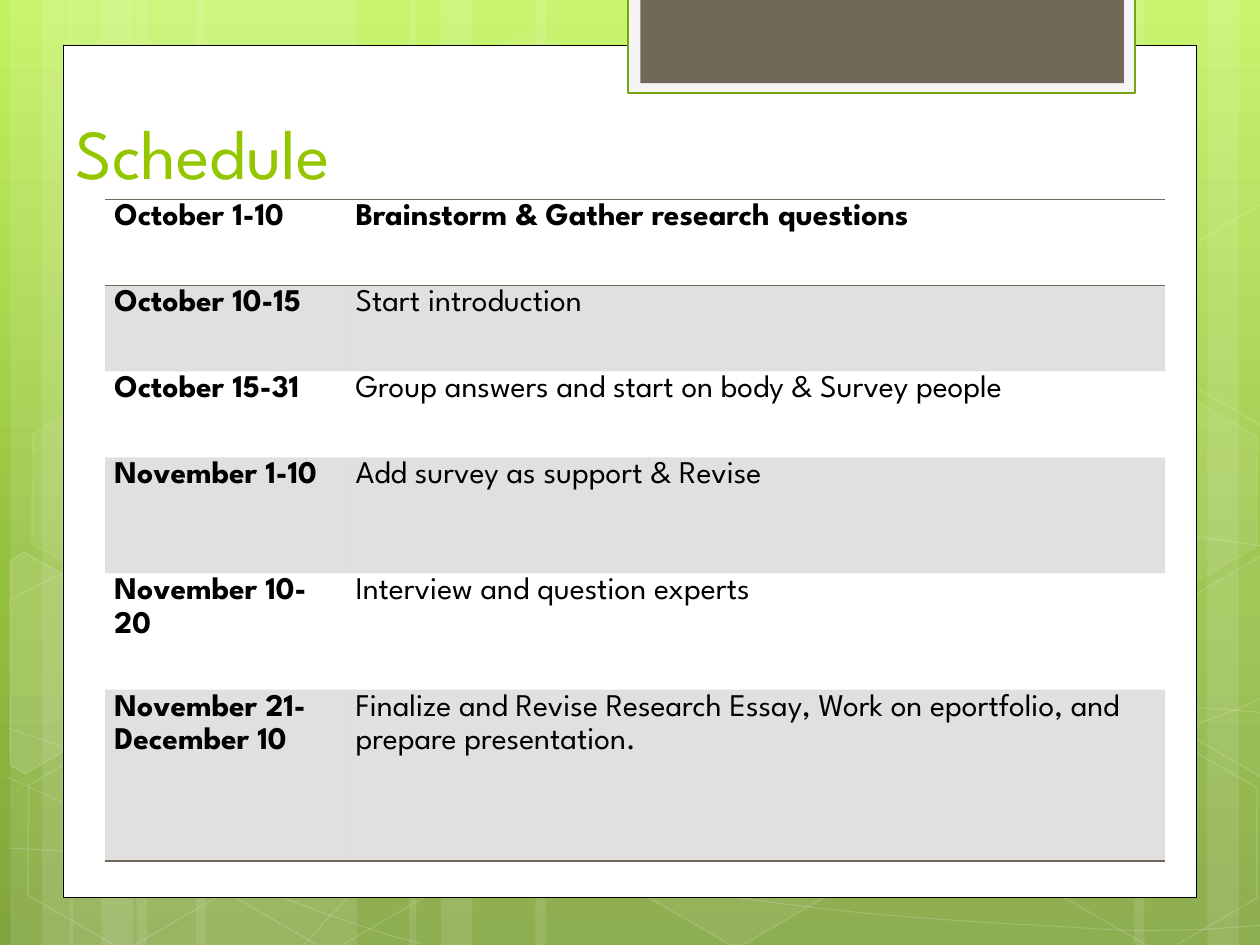
"""Builds the Schedule slide: a green patterned backdrop, a white panel and a dated table."""
from copy import deepcopy
from typing import NamedTuple, Optional

from pptx import Presentation
from pptx.dml.color import RGBColor
from pptx.enum.shapes import MSO_SHAPE as Shp
from pptx.enum.text import MSO_ANCHOR as Anchor
from pptx.oxml import parse_xml
from pptx.oxml.ns import nsdecls, qn
from pptx.util import Pt

WHITE = RGBColor(0xFF, 0xFF, 0xFF)
BLACK = RGBColor(0, 0, 0)
OFF_WHITE = RGBColor(0xF5, 0xF5, 0xF5)
LIME = RGBColor(0x94, 0xC6, 0x00)
GREEN = RGBColor(0x74, 0xA5, 0x10)
BROWN = RGBColor(0x71, 0x68, 0x5A)
BACKDROP = [(0, RGBColor(0xC3, 0xF3, 0x5F)), (0.62, RGBColor(0x93, 0xBF, 0x3F)),
            (1, RGBColor(0x81, 0xA5, 0x3E))]
FONT = "League Spartan"
NO_STYLE = "{2D5ABB26-0587-4C30-8999-92F81FD0307C}"


class Box(NamedTuple):
    x: float
    y: float
    w: float
    h: float


class Paint(NamedTuple):
    fill: Optional[RGBColor] = None
    fill_alpha: int = 100
    line: Optional[RGBColor] = None
    line_alpha: int = 100
    width: float = 1


class Curve(NamedTuple):
    knots: list
    straight: Optional[int] = None


class Hexagon(NamedTuple):
    x: float
    y: float
    fill_alpha: int
    line_alpha: int


class Polygon(NamedTuple):
    points: list
    fill_alpha: int


class Entry(NamedTuple):
    dates: str
    task: str
    height: float


STRIPES = [(78, 126), (6, 36), (24, 60), (112, 126), (40, 36), (58, 60),
           (528, 126), (690, 36), (648, 60), (306, 222), (234, 36), (252, 60)]
CURVES = [
    Curve([(5, 484.6), (43.9, 486.7), (82.8, 488.9), (136.8, 488.2), (190.8, 487.4),
           (257.8, 486), (329.8, 478.8), (401.8, 471.6), (504, 457.9), (570.2, 444.2),
           (635.8, 430.6), (703.4, 409), (725, 396.7)]),
    Curve([(5, 343.4), (25.9, 331.9), (46.8, 321.1), (87.1, 310.3), (128.2, 299.5),
           (186.5, 283.7), (249.8, 278.6), (313.9, 273.6), (391.7, 272.9), (470.9, 278.6),
           (550.1, 284.4), (681.8, 306.7), (725, 312.5)]),
    Curve([(4.3, 444.2), (91.4, 483.8), (177.8, 523.4), (240.5, 539.3)]),
    Curve([(5, 416.2), (27.4, 424.1), (50.4, 432), (92.2, 443.5), (133.9, 454.3),
           (196.6, 472.3), (257, 484.6), (316.8, 496.8), (392.4, 509.8), (452.2, 517),
           (511.9, 524.9), (576, 527.8), (614.2, 529.9), (651.6, 532.8), (661.7, 531.4),
           (680.4, 531.4), (699.1, 530.6), (712.1, 529.2), (725, 528.5)]),
    Curve([(174.2, 539.3), (187.2, 524.9), (200.2, 510.5), (217.4, 497.5), (234.7, 484.6),
           (259.2, 470.2), (279.4, 460.1), (299.5, 450), (311.8, 445.7), (338.4, 438.5),
           (364.3, 431.3), (412.6, 421.2), (437.8, 416.2), (463.7, 411.1), (467.3, 411.1),
           (489.6, 409.7), (511.9, 407.5), (547.2, 405.4), (571.7, 404.6), (596.9, 403.9),
           (637.9, 404.6), (637.9, 404.6), (686.2, 404.6), (699.1, 405.4), (711.4, 406.1),
           (717.8, 406.8), (724.3, 407.5), (722.2, 406.8), (724.3, 407.5)], 21),
]
HEXAGONS = [Hexagon(240.5, 25.9, 4, 8), Hexagon(357.8, 424.1, 6, 12),
            Hexagon(7.9, 425.5, 0, 12), Hexagon(10.1, 224.6, 7, 8),
            Hexagon(125.3, 426.2, 0, 12), Hexagon(542.2, 326.2, 10, 12),
            Hexagon(600.5, 427, 0, 12), Hexagon(600.5, 226.1, 7, 8)]
RIGHT_CUT = [(659.8, 373.8), (690.7, 319.4), (697.5, 319.6), (757.7, 423.8),
             (754.7, 428.7), (691.5, 428.7)]
POLYGONS = [
    Polygon([(-23.9, 339.1), (-19.6, 330.9), (44.2, 330.5), (75.3, 385.8), (44.4, 440.2),
             (34.4, 440.1)], 10),
    Polygon(RIGHT_CUT, 4),
    Polygon([(x, y - 200.9) for x, y in RIGHT_CUT], 0),
]
PANELS = [(Box(36, 26, 648, 487), Paint(WHITE, line=BLACK, width=0.5)),
          (Box(359, -1.5, 289.5, 54.7), Paint(OFF_WHITE, line=GREEN, width=1.25)),
          (Box(366, -1.5, 276.2, 49), Paint(BROWN))]
SCHEDULE = [
    Entry("October 1-10", "Brainstorm & Gather research questions", 49.1),
    Entry("October 10-15", "Start introduction", 49.1),
    Entry("October 15-31", "Group answers and start on body & Survey people", 49.1),
    Entry("November 1-10", "Add survey as support & Revise", 66.4),
    Entry("November 10-20", "Interview and question experts", 66.4),
    Entry("November 21-December 10", "Finalize and Revise Research Essay, Work on eportfolio, "
          "and prepare presentation.", 98),
]


def set_fill(fill, color: Optional[RGBColor], alpha: int, owner) -> None:
    if color is None or alpha == 0:
        fill.background()
        return
    fill.solid()
    fill.fore_color.rgb = color
    if alpha < 100:
        clr = owner.find(qn("a:solidFill")).find(qn("a:srgbClr"))
        clr.append(parse_xml(f'<a:alpha {nsdecls("a")} val="{alpha * 1000}"/>'))


def paint(sp, style: Paint) -> None:
    sp.shadow.inherit = False
    set_fill(sp.fill, style.fill, style.fill_alpha, sp.element.spPr)
    sp.line.width = Pt(style.width)
    set_fill(sp.line.fill, style.line, style.line_alpha, sp.element.spPr.find(qn("a:ln")))


def add_box(s, box: Box, style: Paint, kind=Shp.RECTANGLE):
    sp = s.shapes.add_shape(kind, *map(Pt, box))
    paint(sp, style)
    return sp


def add_outline(s, points: list, style: Paint, close: bool):
    start, *rest = [(Pt(x), Pt(y)) for x, y in points]
    fb = s.shapes.build_freeform(*start)
    fb.add_line_segments(rest, close=close)
    sp = fb.convert_to_shape()
    paint(sp, style)
    return sp


def add_curve(s, curve: Curve, style: Paint) -> None:
    sp = add_outline(s, curve.knots, style, False)
    steps = list(sp.element.iter(qn("a:lnTo")))
    if curve.straight is not None:
        del steps[curve.straight]
    for i in range(0, len(steps), 3):
        bezier = parse_xml(f'<a:cubicBezTo {nsdecls("a")}/>')
        steps[i].addprevious(bezier)
        for step in steps[i:i + 3]:
            bezier.append(step[0])
            step.getparent().remove(step)


def format_run(p, size: float, color: RGBColor, bold: bool = False) -> None:
    for r in p.runs:
        r.font.name, r.font.size, r.font.bold = FONT, Pt(size), bold
        r.font.color.rgb = color


def set_background(s) -> None:
    fill = s.background.fill
    fill.gradient()
    fill.gradient_angle = 270
    stops = s.element.find(".//" + qn("a:gsLst"))
    stops.append(deepcopy(stops[0]))
    for stop, (position, color) in zip(fill.gradient_stops, BACKDROP):
        stop.position = position
        stop.color.rgb = color


def add_title(s, text: str) -> None:
    tf = s.shapes.add_textbox(*map(Pt, Box(36, 24, 648, 90))).text_frame
    tf.word_wrap = True
    tf.vertical_anchor = Anchor.BOTTOM
    tf.text = text
    format_run(tf.paragraphs[0], 40, LIME)


def fill_cell(cell, text: str, bold: bool, shaded: bool, edges: list) -> None:
    cell.margin_left = cell.margin_right = Pt(5.4)
    cell.margin_top = cell.margin_bottom = Pt(0)
    p = cell.text_frame.paragraphs[0]
    p.text = text
    p.line_spacing, p.space_after = 1.15, Pt(6)
    format_run(p, 18, BLACK, bold)
    tcPr = cell._tc.get_or_add_tcPr()
    set_fill(cell.fill, BROWN if shaded else None, 20, tcPr)
    for i, edge in enumerate(edges):
        tcPr.insert(i, parse_xml(
            f'<a:{edge} {nsdecls("a")} w="{Pt(1)}"><a:solidFill><a:srgbClr val="{BROWN}"/>'
            f'</a:solidFill></a:{edge}>'))


def add_schedule(s, entries: list) -> None:
    height = sum(e.height for e in entries)
    table = s.shapes.add_table(len(entries), 2, *map(Pt, Box(60, 114, 605.8, height))).table
    table.first_row = table.horz_banding = False
    table._tbl.tblPr.find(qn("a:tableStyleId")).text = NO_STYLE
    for col, width in zip(table.columns, (137.8, 468)):
        col.width = Pt(width)
    for i, entry in enumerate(entries):
        table.rows[i].height = Pt(entry.height)
        edges = ["lnT", "lnB"] if i == 0 else ["lnB"] if i == len(entries) - 1 else []
        for j, text in enumerate((entry.dates, entry.task)):
            fill_cell(table.cell(i, j), text, i == 0 or j == 0, i % 2 == 1, edges)


def main() -> None:
    prs = Presentation()
    prs.slide_width, prs.slide_height = Pt(720), Pt(540)
    s = prs.slides.add_slide(prs.slide_layouts[6])
    set_background(s)
    for x, w in STRIPES:
        add_box(s, Box(x, 0, w, 540), Paint(WHITE, 10))
    for curve in CURVES:
        add_curve(s, curve, Paint(line=WHITE, line_alpha=20, width=0.5))
    for h in HEXAGONS:
        style = Paint(WHITE, h.fill_alpha, WHITE, h.line_alpha)
        sp = add_box(s, Box(h.x, h.y, 126, 109.4), style, Shp.HEXAGON)
        sp.adjustments[0] = 0.285
        sp.rotation = 30
    for poly in POLYGONS:
        style = Paint(WHITE, poly.fill_alpha, WHITE, 12)
        add_outline(s, poly.points, style, True).rotation = 30
    for box, style in PANELS:
        add_box(s, box, style)
    add_title(s, "Schedule")
    add_schedule(s, SCHEDULE)
    prs.save("out.pptx")


if __name__ == "__main__":
    main()
